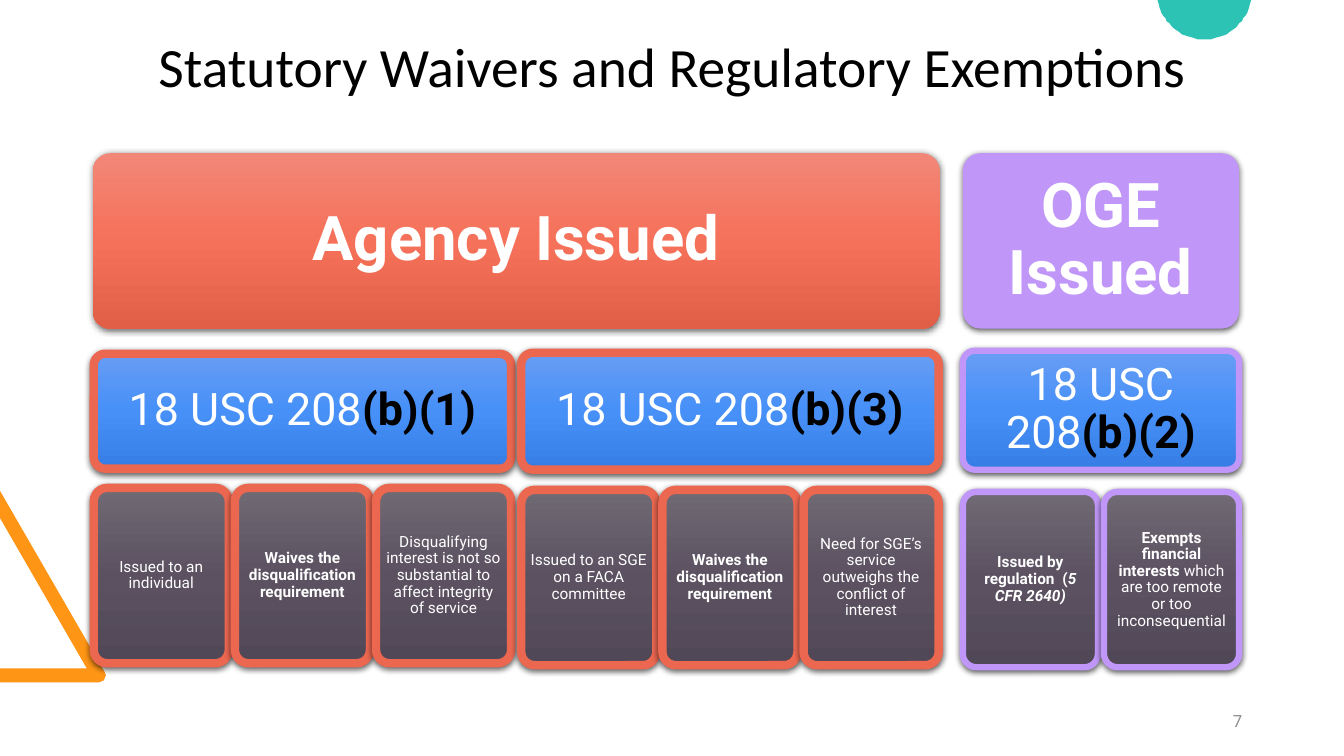
from copy import deepcopy
from math import cos, radians, sin

from lxml.etree import SubElement
from pptx import Presentation
from pptx.dml.color import RGBColor
from pptx.enum.shapes import MSO_SHAPE
from pptx.enum.text import MSO_ANCHOR, PP_ALIGN
from pptx.oxml.ns import qn
from pptx.util import Pt

PX = 9144  # 100 px to the inch

COLORS = {
    "black": "000000", "white": "FFFFFF", "grey": "8C8C8C",
    "orange": "FF9514", "teal": "2CC3B4",
    "coral": "EB6750", "lilac": "C097F8",
}
GRADIENTS = {
    "coral": ("F28777", "F5715A", "E25F47"),
    "blue": ("689DF4", "4690F8", "367EE5"),
    "slate": ("706A74", "5B5161", "514857"),
}

LEAF_WIDTH, LEAF_HEIGHT, LEAF_PITCH = 134, 174, 140
HEADER_TOP, HEADER_HEIGHT = 152, 174
WAIVES = [("Waives the disqualification requirement", "b")]

HEADERS = [
    ("Agency Issued", 92, 840, {"gradient": "coral"}),
    ("OGE Issued", 955, 274, {"fill": "lilac"}),
]

# Paragraph, left, top, height, leaf top, border colour, border points, leaves.
# A leaf is a list of (text, style letters) runs.
STATUTES = [
    ("(b)(1)", 93, 351, 114, 484, "coral", 6, [
        [("Issued to an individual", "")],
        WAIVES,
        [("Disqualifying interest is not so substantial to affect "
          "integrity of service", "")],
    ]),
    ("(b)(3)", 517, 350, 116, 486, "coral", 6, [
        [("Issued to an SGE on a FACA committee", "")],
        WAIVES,
        [("Need for SGE’s service outweighs the conflict of interest", "")],
    ]),
    ("(b)(2)", 955, 348, 118, 488, "lilac", 4.5, [
        [("Issued by regulation  (", "b"), ("5 CFR 2640)", "bi")],
        [("Exempts financial interests ", "b"),
         ("which are too remote or too inconsequential", "")],
    ]),
]


def rgb(name):
    return RGBColor.from_string(COLORS[name])


class Board:
    """Holds the current slide and the style of everything drawn on it."""

    def __init__(self, slide, font="Roboto"):
        self.slide = slide
        self.font = font

    def outline(self, points, color):
        """Draw a filled polygon without a border."""
        builder = self.slide.shapes.build_freeform(*points[0], scale=PX)
        builder.add_line_segments(points[1:], close=True)
        shape = builder.convert_to_shape()
        shape.shadow.inherit = False
        shape.fill.solid()
        shape.fill.fore_color.rgb = rgb(color)
        shape.line.fill.background()

    def set_text(self, shape, runs, size, color, align=PP_ALIGN.CENTER,
                 inset=0, font=None, spacing=0.9):
        """Fill a shape with one paragraph of (text, style, [color]) runs."""
        frame = shape.text_frame
        frame.word_wrap = True
        frame.vertical_anchor = MSO_ANCHOR.MIDDLE
        frame.margin_left = frame.margin_right = inset * PX
        frame.margin_top = frame.margin_bottom = inset * PX
        paragraph = frame.paragraphs[0]
        paragraph.alignment = align
        paragraph.line_spacing = spacing
        paragraph.font.size = Pt(size)
        paragraph.font.name = font or self.font
        for text, style, *run_color in runs:
            run = paragraph.add_run()
            run.text = text
            run.font.bold = "b" in style
            run.font.italic = "i" in style
            run.font.color.rgb = rgb(run_color[0] if run_color else color)

    def label(self, box, text, size, color, **style):
        shape = self.slide.shapes.add_textbox(*(n * PX for n in box))
        self.set_text(shape, [(text, "")], size, color, **style)

    def card(self, box, runs, size, inset, fill=None, gradient=None,
             border=None, border_width=0):
        """Draw a rounded, shadowed card with centred white text."""
        shape = self.slide.shapes.add_shape(
            MSO_SHAPE.ROUNDED_RECTANGLE, *(n * PX for n in box))
        shape.adjustments[0] = 0.1
        if gradient:
            self.shade(shape, GRADIENTS[gradient])
        else:
            shape.fill.solid()
            shape.fill.fore_color.rgb = rgb(fill)
        if border:
            shape.line.color.rgb = rgb(border)
            shape.line.width = Pt(border_width)
        else:
            shape.line.fill.background()
        self.drop_shadow(shape)
        self.set_text(shape, runs, size, "white", inset=inset)

    def shade(self, shape, stops):
        """Apply a three-stop gradient from top to bottom."""
        shape.fill.gradient()
        shape.fill.gradient_angle = 270
        stop_list = shape._element.spPr.find(".//" + qn("a:gsLst"))
        stop_list.append(deepcopy(stop_list[-1]))
        for index, stop in enumerate(shape.fill.gradient_stops):
            stop.position = index / 2
            stop.color.rgb = RGBColor.from_string(stops[index])

    def drop_shadow(self, shape):
        shape.shadow.inherit = False
        effects = shape._element.spPr.find(qn("a:effectLst"))
        shadow = SubElement(
            effects, qn("a:outerShdw"), blurRad=str(int(Pt(4.5))),
            dist=str(int(Pt(1.5))), dir="5400000", rotWithShape="0")
        color = SubElement(shadow, qn("a:srgbClr"), val=COLORS["black"])
        SubElement(color, qn("a:alpha"), val="63000")


def main():
    presentation = Presentation()
    presentation.slide_width = 1333 * PX
    presentation.slide_height = 750 * PX
    board = Board(presentation.slides.add_slide(presentation.slide_layouts[6]))

    board.outline([(0, 677), (0, 663), (86, 663), (0, 514), (0, 487),
                   (104, 667), (105, 670), (103, 675), (98, 677)], "orange")
    board.outline([(round(1194.5 + 47 * cos(radians(angle)), 2),
                    round(-8 + 47 * sin(radians(angle)), 2))
                   for angle in range(10, 171, 4)], "teal")
    board.label((111, 49, 1111, 39), "Statutory Waivers and Regulatory Exemptions",
                39.6, "black", font="Calibri")

    for text, left, width, paint in HEADERS:
        board.card((left, HEADER_TOP, width, HEADER_HEIGHT),
                   [(text, "b")], 44, 18, **paint)

    for clause, left, top, height, leaf_top, color, points, leaves in STATUTES:
        border = {"border": color, "border_width": points}
        width = LEAF_PITCH * (len(leaves) - 1) + LEAF_WIDTH
        board.card((left, top, width, height),
                   [("18 USC 208", ""), (clause, "b", "black")],
                   32, 13, gradient="blue", **border)
        for index, runs in enumerate(leaves):
            board.card((left + index * LEAF_PITCH, leaf_top,
                        LEAF_WIDTH, LEAF_HEIGHT),
                       runs, 11, 5, gradient="slate", **border)

    board.label((942, 695, 300, 40), "7", 12, "grey",
                align=PP_ALIGN.RIGHT, inset=10, spacing=1.0)
    presentation.save("out.pptx")


if __name__ == "__main__":
    main()
